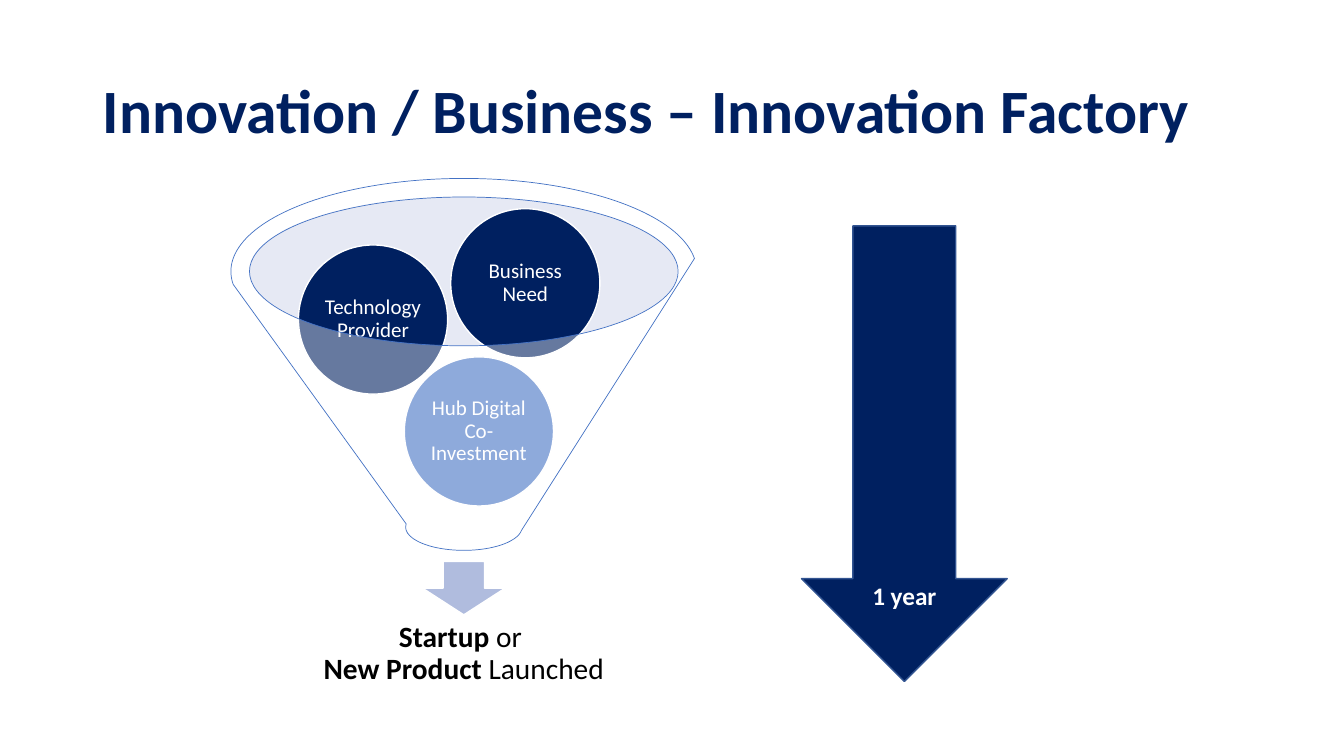
from lxml import etree
from pptx import Presentation
from pptx.dml.color import RGBColor
from pptx.enum.shapes import MSO_SHAPE
from pptx.enum.text import MSO_ANCHOR, PP_ALIGN
from pptx.oxml.ns import qn
from pptx.util import Inches, Pt

OVAL, FUNNEL, DOWN_ARROW = MSO_SHAPE.OVAL, MSO_SHAPE.FUNNEL, MSO_SHAPE.DOWN_ARROW
MIDDLE, BOTTOM = MSO_ANCHOR.MIDDLE, MSO_ANCHOR.BOTTOM
LEFT, CENTER = PP_ALIGN.LEFT, PP_ALIGN.CENTER

COLORS = {
    "navy": "002060",
    "blue": "4472C4",
    "edge": "325491",
    "mist": "C1C9E4",
    "pale": "B0BCDE",
    "white": "FFFFFF",
    "black": "000000",
}

deck = Presentation()
deck.slide_width, deck.slide_height = Inches(13.33), Inches(7.5)
page = deck.slides.add_slide(deck.slide_layouts[6])


def add_filled(kind, place, fill, line=None, width=1, opacity=100):
    """Add a preset shape; opacity is the fill's percentage."""
    shape = page.shapes.add_shape(kind, *map(Inches, place))
    shape.shadow.inherit = False
    shape.fill.solid()
    shape.fill.fore_color.rgb = RGBColor.from_string(COLORS[fill])
    if opacity < 100:
        color = shape._element.spPr.find(qn("a:solidFill")).find(qn("a:srgbClr"))
        etree.SubElement(color, qn("a:alpha")).set("val", str(opacity * 1000))
    if line:
        shape.line.color.rgb = RGBColor.from_string(COLORS[line])
        shape.line.width = Pt(width)
    else:
        shape.line.fill.background()
    return shape


def write(shape, lines, size, color, align=CENTER, anchor=MIDDLE, margins=(0.1, 0.05, 0.1, 0.05)):
    """Fill one paragraph; each line is a list of (text, bold) spans."""
    frame = shape.text_frame
    frame.word_wrap = True
    frame.vertical_anchor = anchor
    for side, margin in zip(("left", "top", "right", "bottom"), margins):
        setattr(frame, f"margin_{side}", Inches(margin))
    para = frame.paragraphs[0]
    para.alignment, para.line_spacing = align, 0.9
    for index, spans in enumerate(lines):
        if index:
            para.add_line_break()
        for text, bold in spans:
            span = para.add_run()
            span.text = text
            for name, value in {"name": "Calibri", "size": Pt(size), "bold": bold}.items():
                setattr(span.font, name, value)
            span.font.color.rgb = RGBColor.from_string(COLORS[color])


# Title
title = page.shapes.add_textbox(*map(Inches, (0.92, 0.4, 11.5, 1.45)))
write(title, [[("Innovation / Business – Innovation Factory", True)]], 44, "navy", LEFT)

# Funnel mouth, outlet arrow and result
add_filled(OVAL, (2.47, 1.95, 4.25, 1.48), "mist", opacity=40)
add_filled(DOWN_ARROW, (4.19, 5.57, 0.82, 0.53), "pale", "white")
result = page.shapes.add_textbox(*map(Inches, (2.62, 5.99, 3.96, 0.99)))
result_lines = [
    [("Startup", True), (" or ", False)],
    [("New Product ", True), ("Launched", False)],
]
write(result, result_lines, 21, "black", margins=[0.16] * 4)

# Ingredients, seen through the translucent funnel
ingredients = [
    ("Hub Digital Co-Investment", 4.01, 3.54, "blue"),
    ("Technology Provider", 2.96, 2.43, "navy"),
    ("Business Need", 4.47, 2.07, "navy"),
]
for label, left, top, fill in ingredients:
    circle = add_filled(OVAL, (left, top, 1.48, 1.48), fill, "white")
    write(circle, [[(label, False)]], 15, "white", margins=[0.02] * 4)
add_filled(FUNNEL, (2.29, 1.77, 4.62, 3.69), "white", "blue", 0.5, opacity=40)

# Duration
duration = add_filled(DOWN_ARROW, (7.95, 2.24, 2.04, 4.52), "navy", "edge")
write(duration, [[("1 year", True)]], 18, "white", anchor=BOTTOM, margins=(0.1, 0.05, 0.1, 0.19))

deck.save("out.pptx")
